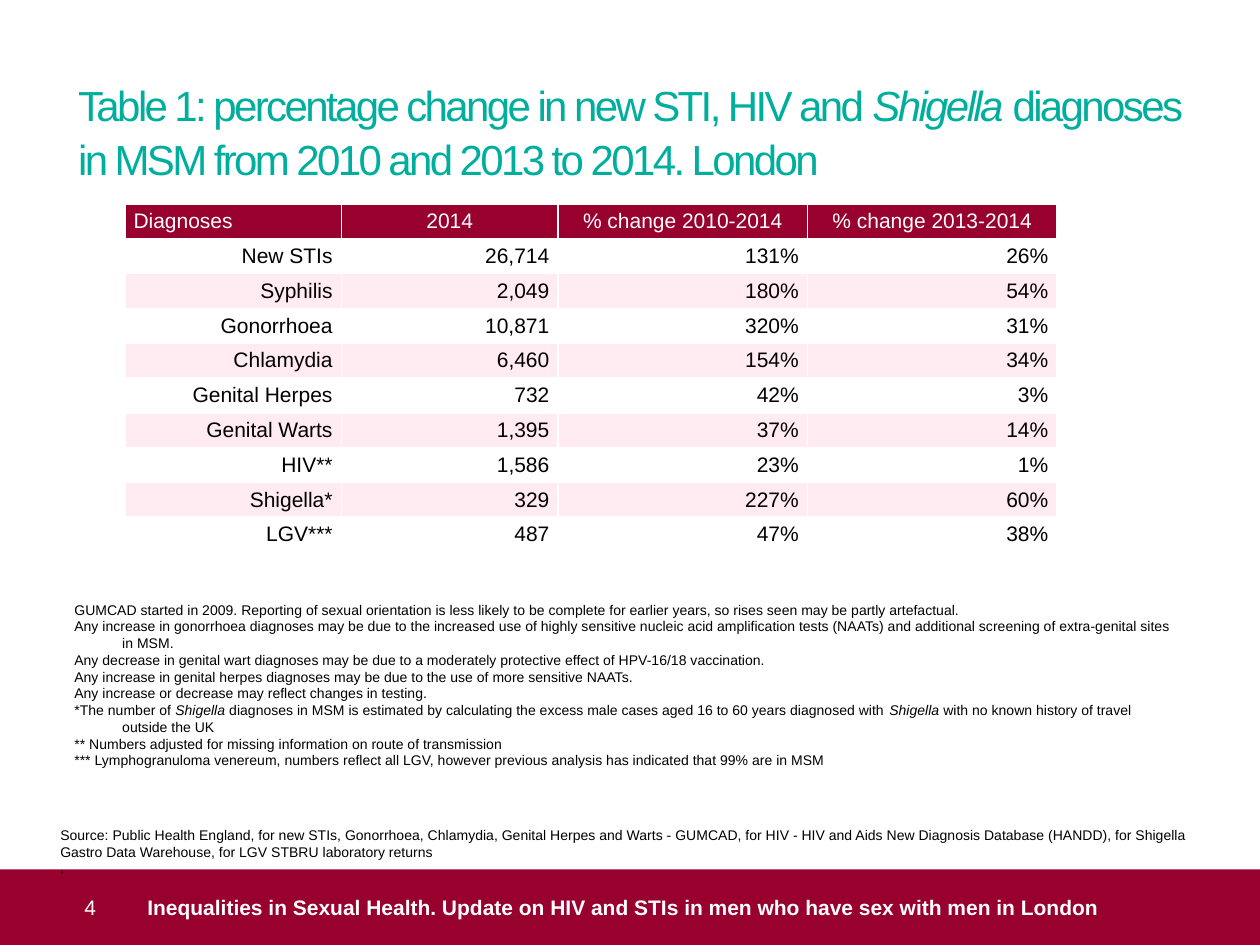
from dataclasses import dataclass

from lxml import etree
from pptx import Presentation
from pptx.dml.color import RGBColor
from pptx.enum.shapes import MSO_SHAPE
from pptx.enum.text import MSO_ANCHOR, MSO_AUTO_SIZE, PP_ALIGN
from pptx.oxml.ns import qn
from pptx.util import Inches, Pt

LEFT, CENTER, RIGHT = PP_ALIGN.LEFT, PP_ALIGN.CENTER, PP_ALIGN.RIGHT
TOP, MIDDLE = MSO_ANCHOR.TOP, MSO_ANCHOR.MIDDLE
NO_AUTOFIT = MSO_AUTO_SIZE.NONE
RECTANGLE = MSO_SHAPE.RECTANGLE


@dataclass(frozen=True)
class Theme:
    font: str = "Arial"
    heading: str = "00AE9E"
    accent: str = "98002E"
    band: str = "FFEBF1"
    light: str = "FFFFFF"
    dark: str = "000000"
    title_size: float = 24
    main_size: float = 12
    note_size: float = 8


THEME = Theme()
SLIDE_W, SLIDE_H = Inches(10), Inches(7.5)
GRID = 100  # columns and rows across the slide

# Each text is a list of (wording, italic) runs
TITLE = [
    ("Table 1: percentage change in new STI, HIV and ", False),
    ("Shigella", True),
    (" diagnoses in MSM from 2010 and 2013 to 2014. London", False),
]
HEADER = ("Diagnoses", "2014", "% change 2010-2014", "% change 2013-2014")
DIAGNOSES = [
    ("New STIs", "26,714", "131%", "26%"),
    ("Syphilis", "2,049", "180%", "54%"),
    ("Gonorrhoea", "10,871", "320%", "31%"),
    ("Chlamydia", "6,460", "154%", "34%"),
    ("Genital Herpes", "732", "42%", "3%"),
    ("Genital Warts", "1,395", "37%", "14%"),
    ("HIV**", "1,586", "23%", "1%"),
    ("Shigella*", "329", "227%", "60%"),
    ("LGV***", "487", "47%", "38%"),
]
COLUMN_WEIGHTS = (1.72, 1.72, 1.98, 1.98)
NOTES = [
    [("GUMCAD started in 2009. Reporting of sexual orientation is less likely to be "
      "complete for earlier years, so rises seen may be partly artefactual.", False)],
    [("Any increase in gonorrhoea diagnoses may be due to the increased use of highly "
      "sensitive nucleic acid amplification tests (NAATs) and additional screening of "
      "extra-genital sites in MSM.", False)],
    [("Any decrease in genital wart diagnoses may be due to a moderately protective "
      "effect of HPV-16/18 vaccination.", False)],
    [("Any increase in genital herpes diagnoses may be due to the use of more "
      "sensitive NAATs.", False)],
    [("Any increase or decrease may reflect changes in testing.", False)],
    [("*The number of ", False), ("Shigella ", True),
     ("diagnoses in MSM is estimated by calculating the excess male cases aged 16 to "
      "60 years diagnosed with ", False), ("Shigella", True),
     (" with no known history of travel outside the UK", False)],
    [("** Numbers adjusted for missing information on route of transmission", False)],
    [("*** Lymphogranuloma venereum, numbers reflect all LGV, however previous "
      "analysis has indicated that 99% are in MSM", False)],
]
SOURCE = [
    [("Source: Public Health England, for new STIs, Gonorrhoea, Chlamydia, Genital "
      "Herpes and Warts - GUMCAD, for HIV - HIV and Aids New Diagnosis Database "
      "(HANDD), for Shigella Gastro Data Warehouse, for LGV STBRU laboratory returns",
      False)],
    [(".", False)],
]
FOOTER = [("Inequalities in Sexual Health. Update on HIV and STIs in men who have "
           "sex with men in London", False)]


def grid_box(column, row, columns, rows):
    return (int(SLIDE_W * column / GRID), int(SLIDE_H * row / GRID),
            int(SLIDE_W * columns / GRID), int(SLIDE_H * rows / GRID))


def place(shape, box):
    shape.left, shape.top, shape.width, shape.height = box


def set_frame(frame, anchor=TOP, margins=(0, 0, 0, 0)):
    frame.word_wrap = True
    frame.auto_size = NO_AUTOFIT
    frame.vertical_anchor = anchor
    (frame.margin_left, frame.margin_top,
     frame.margin_right, frame.margin_bottom) = map(Inches, margins)


def write(paragraph, runs, size, color, align=LEFT, bold=False, spacing=0):
    paragraph.alignment = align
    for wording, italic in runs:
        run = paragraph.add_run()
        run.text = wording
        font = run.font
        font.name, font.size = THEME.font, Pt(size)
        font.bold, font.italic = bold, italic
        font.color.rgb = RGBColor.from_string(color)
        if spacing:
            font._element.set("spc", str(int(spacing * 100)))


def write_paragraphs(frame, texts, size, color):
    for index, runs in enumerate(texts):
        paragraph = frame.add_paragraph() if index else frame.paragraphs[0]
        paragraph.space_before = paragraph.space_after = Pt(0)
        write(paragraph, runs, size, color)


def set_indent(paragraph, margin, first_line=0):
    properties = paragraph._p.get_or_add_pPr()
    properties.set("marL", str(Inches(margin)))
    properties.set("indent", str(Inches(first_line)))
    return properties


def fill_solid(target, color):
    target.fill.solid()
    target.fill.fore_color.rgb = RGBColor.from_string(color)


def set_borders(cell, color, width):
    properties = cell._tc.get_or_add_tcPr()
    for position, side in enumerate(("a:lnL", "a:lnR", "a:lnT", "a:lnB")):
        line = etree.Element(qn(side), w=str(Pt(width)))
        solid = etree.SubElement(line, qn("a:solidFill"))
        etree.SubElement(solid, qn("a:srgbClr"), val=color)
        properties.insert(position, line)


def add_title(slide, box):
    title = slide.shapes.title
    place(title, box)
    set_frame(title.text_frame)
    heading = title.text_frame.paragraphs[0]
    heading.line_spacing = 1.07
    write(heading, TITLE, THEME.title_size, THEME.heading, spacing=-1.5)


def add_notes(slide, box):
    notes = slide.placeholders[1]
    place(notes, box)
    set_frame(notes.text_frame)
    write_paragraphs(notes.text_frame, NOTES, THEME.note_size, THEME.dark)
    for paragraph in notes.text_frame.paragraphs:
        etree.SubElement(set_indent(paragraph, 0.38, -0.38), qn("a:buNone"))


def add_footer(slide, box):
    left, top, width, height = box
    # Band with page number
    band = slide.shapes.add_shape(RECTANGLE, *box)
    band.shadow.inherit = False
    fill_solid(band, THEME.accent)
    band.line.fill.background()
    # Presentation name
    name_left = int(width * 0.1)
    name = slide.shapes.add_textbox(left + name_left, top, int(width * 0.88), height)
    for shape, runs, margin, bold in ((band, [("4", False)], 0.67, False),
                                      (name, FOOTER, 0.17, True)):
        set_frame(shape.text_frame, MIDDLE)
        paragraph = shape.text_frame.paragraphs[0]
        write(paragraph, runs, THEME.main_size, THEME.light, bold=bold)
        set_indent(paragraph, margin)


def add_source(slide, box):
    source = slide.shapes.add_textbox(*box)
    set_frame(source.text_frame, margins=(0.1, 0.05, 0.1, 0.05))
    write_paragraphs(source.text_frame, SOURCE, THEME.note_size, THEME.dark)


def add_diagnoses_table(slide, box):
    rows = [HEADER, *DIAGNOSES]
    table = slide.shapes.add_table(len(rows), len(HEADER), *box).table
    for column, weight in zip(table.columns, COLUMN_WEIGHTS):
        column.width = int(box[2] * weight / sum(COLUMN_WEIGHTS))
    for r, values in enumerate(rows):
        table.rows[r].height = box[3] // len(rows)
        for c, value in enumerate(values):
            if r == 0:
                fill, color, align = THEME.accent, THEME.light, CENTER if c else LEFT
            else:
                fill = THEME.light if r % 2 else THEME.band
                color, align = THEME.dark, RIGHT
            cell = table.cell(r, c)
            cell.vertical_anchor = MIDDLE
            cell.margin_left = cell.margin_right = Inches(0.07)
            cell.margin_top = cell.margin_bottom = 0
            fill_solid(cell, fill)
            set_borders(cell, THEME.light, 1)
            write(cell.text_frame.paragraphs[0], [(value, False)],
                  THEME.main_size, color, align)


def main():
    deck = Presentation()
    deck.slide_width, deck.slide_height = SLIDE_W, SLIDE_H
    slide = deck.slides.add_slide(deck.slide_layouts[1])
    add_title(slide, grid_box(6.2, 8, 87.8, 9.5))
    add_notes(slide, grid_box(5.9, 63.6, 87.8, 20.9))
    add_footer(slide, grid_box(0, 92, 100, 8))
    add_source(slide, grid_box(3.8, 86.8, 94.5, 8.9))
    add_diagnoses_table(slide, grid_box(9.9, 21.6, 74, 36.8))
    deck.save("out.pptx")


if __name__ == "__main__":
    main()
